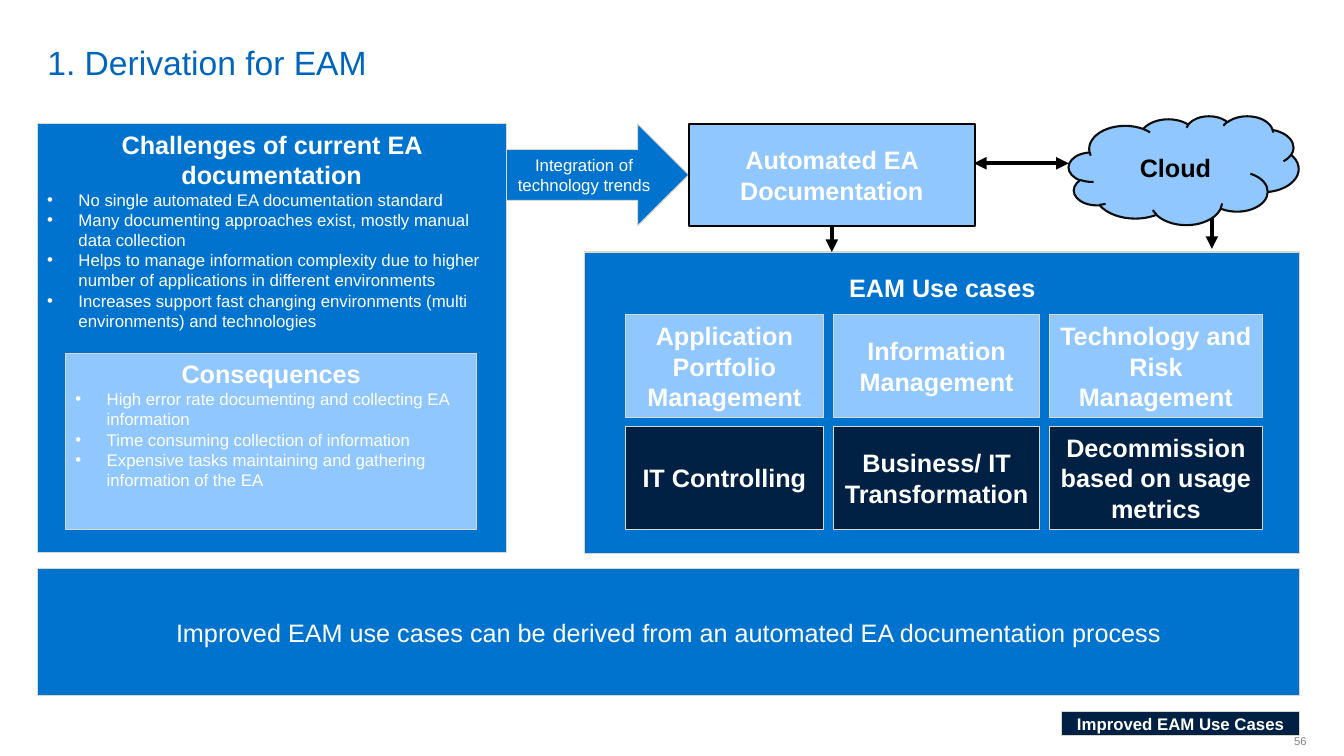
from dataclasses import dataclass

from lxml import etree
from pptx import Presentation
from pptx.dml.color import RGBColor
from pptx.enum.shapes import MSO_CONNECTOR, MSO_SHAPE
from pptx.enum.text import MSO_ANCHOR, MSO_AUTO_SIZE, PP_ALIGN
from pptx.oxml.ns import qn
from pptx.util import Inches, Pt

LEFT, CENTER, RIGHT = PP_ALIGN.LEFT, PP_ALIGN.CENTER, PP_ALIGN.RIGHT
TOP, MIDDLE, BOTTOM = MSO_ANCHOR.TOP, MSO_ANCHOR.MIDDLE, MSO_ANCHOR.BOTTOM
RECTANGLE, PROCESS = MSO_SHAPE.RECTANGLE, MSO_SHAPE.FLOWCHART_PROCESS
CLOUD, RIGHT_ARROW = MSO_SHAPE.CLOUD, MSO_SHAPE.RIGHT_ARROW
STRAIGHT = MSO_CONNECTOR.STRAIGHT
NO_AUTOFIT = MSO_AUTO_SIZE.NONE
BOTTOM_SITE = 2


@dataclass(frozen=True)
class Theme:
    """Colours, font and type sizes of the slide."""
    font: str = "Arial"
    title: str = "0065BD"
    blue: str = "0073CF"
    light: str = "90C7FF"
    navy: str = "002143"
    border: str = "DAD7CB"
    outline: str = "0D0D0D"
    black: str = "000000"
    white: str = "FFFFFF"
    grey: str = "808080"
    title_size: int = 24
    heading_size: int = 18
    body_size: int = 12
    number_size: int = 8


class SlideBuilder:
    """Draws styled elements on one slide."""

    def __init__(self, slide, theme):
        """Keep the slide and its theme."""
        self.slide = slide
        self.theme = theme

    def add_text(self, paragraph, text, size, color, bold=False, align=LEFT):
        """Add one styled run to a paragraph."""
        paragraph.alignment = align
        run = paragraph.add_run()
        run.text = text
        run.font.name = self.theme.font
        run.font.size = Pt(size)
        run.font.bold = bold
        run.font.color.rgb = RGBColor.from_string(color)

    def title(self, text, left, top, width, height):
        """Place and fill the title placeholder."""
        shape = self.slide.shapes.title
        shape.left, shape.top = Inches(left), Inches(top)
        shape.width, shape.height = Inches(width), Inches(height)
        frame = shape.text_frame
        frame.auto_size = NO_AUTOFIT
        frame.vertical_anchor = BOTTOM
        frame.margin_top = frame.margin_bottom = 0
        self.add_text(frame.paragraphs[0], text, self.theme.title_size, self.theme.title)

    def box(self, lines, left, top, width, height, fill, kind=RECTANGLE, size=None,
            color=None, bold=True, anchor=MIDDLE, border=None, border_width=0.75):
        """Add a filled shape with centred lines of text."""
        theme = self.theme
        shape = self.slide.shapes.add_shape(
            kind, Inches(left), Inches(top), Inches(width), Inches(height))
        shape.shadow.inherit = False
        shape.fill.solid()
        shape.fill.fore_color.rgb = RGBColor.from_string(fill)
        shape.line.color.rgb = RGBColor.from_string(border or theme.border)
        shape.line.width = Pt(border_width)
        frame = shape.text_frame
        frame.word_wrap = True
        frame.vertical_anchor = anchor
        for index, line in enumerate(lines):
            paragraph = frame.add_paragraph() if index else frame.paragraphs[0]
            self.add_text(paragraph, line, size or theme.heading_size,
                          color or theme.white, bold, CENTER)
        return shape

    def bullets(self, shape, items):
        """Append bulleted paragraphs to a shape."""
        for item in items:
            paragraph = shape.text_frame.add_paragraph()
            properties = paragraph._p.get_or_add_pPr()
            properties.set("marL", str(Inches(0.31)))
            properties.set("indent", str(-Inches(0.31)))
            etree.SubElement(properties, qn("a:buFont")).set("typeface", self.theme.font)
            etree.SubElement(properties, qn("a:buChar")).set("char", "•")
            self.add_text(paragraph, item, self.theme.body_size, self.theme.white)

    def arrow(self, start, end, both=False, source=None):
        """Add a thick arrow, optionally two-headed or joined to a box above."""
        connector = self.slide.shapes.add_connector(
            STRAIGHT, *(Inches(value) for value in (*start, *end)))
        if source is not None:
            connector.begin_connect(source, BOTTOM_SITE)
        connector.line.color.rgb = RGBColor.from_string(self.theme.black)
        connector.line.width = Pt(3)
        properties = connector._element.spPr
        line = properties.find(qn("a:ln"))
        for tag in ("a:headEnd", "a:tailEnd") if both else ("a:tailEnd",):
            etree.SubElement(line, qn(tag)).set("type", "triangle")
        etree.SubElement(properties, qn("a:effectLst"))

    def page_number(self, text, left, top, width, height):
        """Add the page number."""
        frame = self.slide.shapes.add_textbox(
            Inches(left), Inches(top), Inches(width), Inches(height)).text_frame
        frame.word_wrap = False
        frame.vertical_anchor = MIDDLE
        frame.margin_right = 0
        self.add_text(frame.paragraphs[0], text, self.theme.number_size,
                      self.theme.grey, align=RIGHT)


def main():
    """Build and save the slide."""
    presentation = Presentation()
    presentation.slide_width = Inches(13.33)
    presentation.slide_height = Inches(7.5)
    theme = Theme()
    slide = presentation.slides.add_slide(presentation.slide_layouts[5])
    builder = SlideBuilder(slide, theme)

    builder.title("1. Derivation for EAM", 0.37, 0.03, 11.58, 0.79)
    builder.page_number("56", 12.6, 7.19, 0.36, 0.32)
    builder.box(["Integration of technology trends"], 5.01, 1.23, 1.82, 1.01, theme.blue,
                kind=RIGHT_ARROW, size=theme.body_size, bold=False)

    use_cases = builder.box(["EAM Use cases"], 5.8, 2.5, 7.09, 2.99, theme.blue, anchor=TOP)
    use_cases.text_frame.paragraphs[0].line_spacing = 1.5
    column_widths = (1.97, 2.04, 2.11)
    use_case_rows = (
        (theme.light, (["Application Portfolio Management"], ["Information Management"],
                       ["Technology and Risk Management"])),
        (theme.navy, (["IT Controlling"], ["Business/ IT Transformation"],
                      ["Decommission", "based on usage metrics"])),
    )
    for row, (fill, labels) in enumerate(use_case_rows):
        left = 6.2
        for width, lines in zip(column_widths, labels):
            builder.box(lines, left, 3.12 + row * 1.11, width, 1.02, fill)
            left += width + 0.1

    challenges = builder.box(["Challenges of current EA documentation"],
                             0.37, 1.23, 4.65, 4.25, theme.blue, anchor=TOP)
    builder.bullets(challenges, (
        "No single automated EA documentation standard",
        "Many documenting approaches exist, mostly manual data collection",
        "Helps to manage information complexity due to higher number of applications "
        "in different environments",
        "Increases support fast changing environments (multi environments) and technologies",
    ))
    consequences = builder.box(["Consequences"], 0.65, 3.51, 4.08, 1.74, theme.light,
                               kind=PROCESS, anchor=TOP)
    builder.bullets(consequences, (
        "High error rate documenting and collecting EA information",
        "Time consuming collection of information",
        "Expensive tasks maintaining and gathering information of the EA",
    ))
    builder.box(["Improved EAM use cases can be derived from an automated EA "
                 "documentation process"], 0.37, 5.64, 12.52, 1.26, theme.blue, bold=False)

    builder.arrow((12.02, 2.1), (12.02, 2.47))
    builder.arrow((9.66, 1.62), (10.6, 1.62), both=True)
    builder.box(["Cloud"], 10.6, 1.15, 2.28, 1.08, theme.light, kind=CLOUD,
                color=theme.black, border=theme.outline, border_width=1.5)
    automated = builder.box(["Automated EA Documentation"], 6.83, 1.23, 2.84, 1.01,
                            theme.light, border=theme.black, border_width=1.5)
    builder.arrow((8.25, 2.24), (8.25, 2.5), source=automated)
    builder.box(["Improved EAM Use Cases"], 10.53, 7.06, 2.36, 0.24, theme.navy,
                size=theme.body_size)

    presentation.save("out.pptx")


if __name__ == "__main__":
    main()
